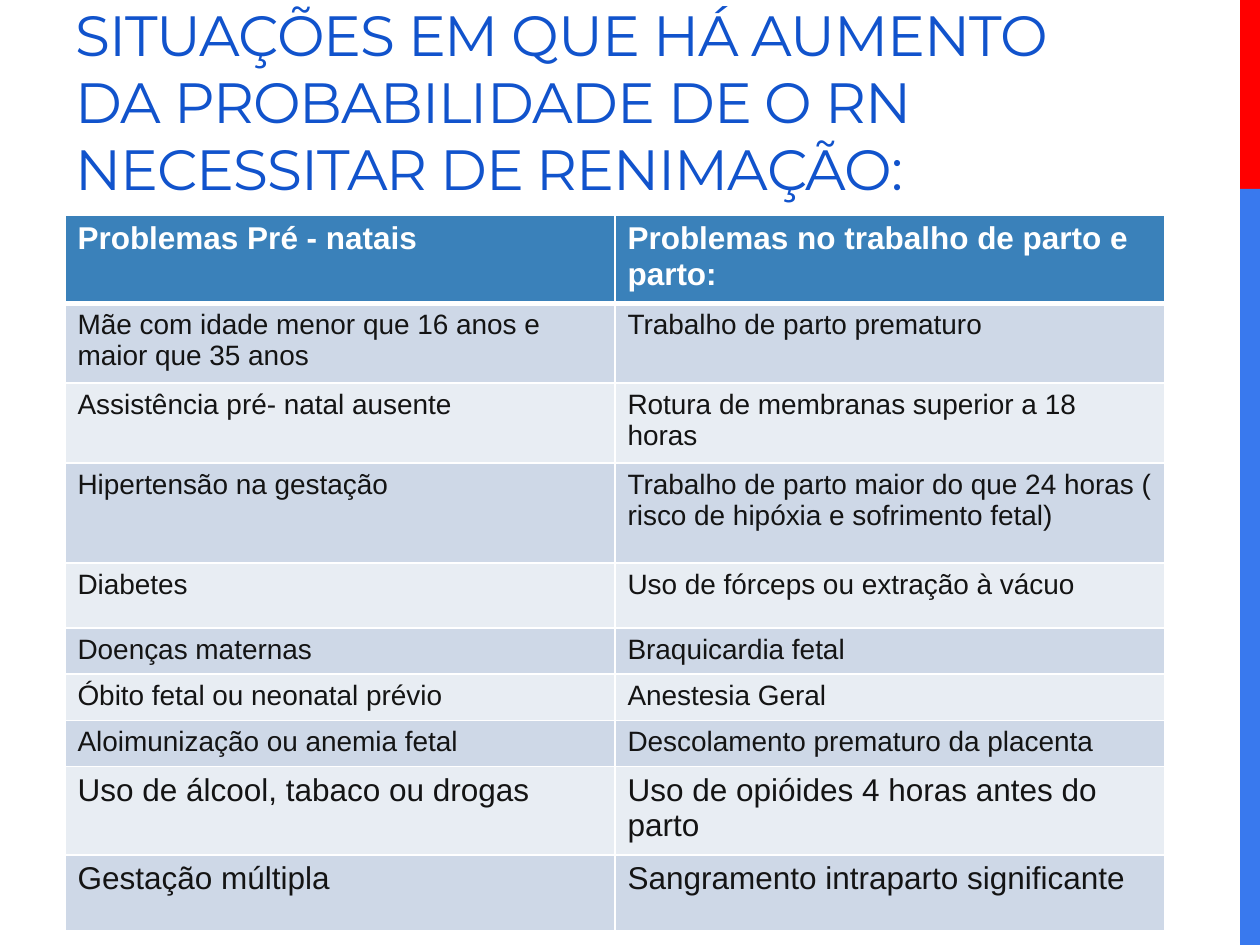
from dataclasses import dataclass
from typing import NamedTuple

from lxml.etree import SubElement as Sub
from pptx import Presentation
from pptx.dml.color import RGBColor as Rgb
from pptx.enum.shapes import MSO_SHAPE as Kind
from pptx.enum.text import MSO_ANCHOR as Anchor
from pptx.oxml.ns import qn
from pptx.util import Pt

SCALE = 914400 / 126


@dataclass(frozen=True)
class Theme:
    """Colours, fonts and type sizes of the slide."""
    red: str = "FF0000"
    blue: str = "3979EE"
    title: str = "1153CC"
    head: str = "3A81BA"
    dark: str = "CED8E7"
    light: str = "E8EDF3"
    ink: str = "141414"
    white: str = "FFFFFF"
    face: str = "Montserrat"
    body: str = "Arial"
    big: float = 32.4
    mid: int = 18
    small: int = 16


class Box(NamedTuple):
    """A place on the slide in px."""
    left: int
    top: int
    width: int
    height: int


class Bar(NamedTuple):
    """A coloured strip on the right edge."""
    box: Box
    fill: str


class Row(NamedTuple):
    """A table row: its height, its type size and both texts."""
    height: int
    size: int
    left: str
    right: str


LOOK = Theme()
BARS = [
    Bar(Box(1240, 0, 20, 189), LOOK.red),
    Bar(Box(1240, 189, 20, 756), LOOK.blue),
]
TITLE = "SITUAÇÕES EM QUE HÁ AUMENTO DA PROBABILIDADE DE O RN NECESSITAR DE RENIMAÇÃO:"
ROWS = [
    Row(83, LOOK.mid, "Problemas Pré - natais", "Problemas no trabalho de parto e parto:"),
    Row(75, LOOK.small, "Mãe com idade menor que 16 anos e maior que 35 anos", "Trabalho de parto prematuro"),
    Row(75, LOOK.small, "Assistência pré- natal ausente", "Rotura de membranas superior a 18 horas"),
    Row(100, LOOK.small, "Hipertensão na gestação",
        "Trabalho de parto maior do que 24 horas ( risco de hipóxia e sofrimento fetal)"),
    Row(65, LOOK.small, "Diabetes", "Uso de fórceps ou extração à vácuo"),
    Row(44, LOOK.small, "Doenças maternas", "Braquicardia fetal"),
    Row(44, LOOK.small, "Óbito fetal ou neonatal prévio", "Anestesia Geral"),
    Row(44, LOOK.small, "Aloimunização ou anemia fetal", "Descolamento prematuro da placenta"),
    Row(83, LOOK.mid, "Uso de álcool, tabaco ou drogas", "Uso de opióides 4 horas antes do parto"),
    Row(76, LOOK.mid, "Gestação múltipla", "Sangramento intraparto significante"),
]


def px(num: int) -> int:
    """Turn px into EMU."""
    return round(num * SCALE)


def place(box: Box) -> list[int]:
    """Turn a box into EMU."""
    return [px(num) for num in box]


def style(item: object, form: dict) -> None:
    """Set each format value on an item."""
    for name, value in form.items():
        setattr(item, name, value)


def paint(fill: object, tint: str) -> None:
    """Give a solid fill."""
    fill.solid()
    fill.fore_color.rgb = Rgb.from_string(tint)


def write(frame: object, text: str, tint: str, form: dict) -> object:
    """Write one run of text and return it."""
    run = frame.paragraphs[0].add_run()
    run.text = text
    style(run.font, form)
    run.font.color.rgb = Rgb.from_string(tint)
    return run


def draw_bar(slide: object, bar: Bar) -> None:
    """Draw a plain strip."""
    shape = slide.shapes.add_shape(Kind.RECTANGLE, *place(bar.box))
    shape.shadow.inherit = False
    paint(shape.fill, bar.fill)
    shape.line.fill.background()


def draw_title(slide: object, box: Box) -> None:
    """Write the heading."""
    frame = slide.shapes.add_textbox(*place(box)).text_frame
    style(frame, {"word_wrap": True, "vertical_anchor": Anchor.BOTTOM})
    frame.paragraphs[0].line_spacing = 0.98
    run = write(frame, TITLE, LOOK.title, {"name": LOOK.face, "size": Pt(LOOK.big)})
    run.font._element.set("spc", "-60")


def edge(cell: object, sides: dict[str, int]) -> None:
    """Add white borders with the given widths."""
    props = cell._tc.get_or_add_tcPr()
    for side, width in sides.items():
        line = Sub(props, qn(f"a:ln{side}"), w=str(Pt(width)))
        Sub(Sub(line, qn("a:solidFill")), qn("a:srgbClr"), val=LOOK.white)


def draw_table(slide: object, box: Box, rows: list[Row]) -> None:
    """Draw the table of risks."""
    table = slide.shapes.add_table(len(rows), 2, *place(box)).table
    for col in table.columns:
        col.width = px(box.width // 2)
    for i, row in enumerate(rows):
        table.rows[i].height = px(row.height)
        head = i == 0
        fill = LOOK.head if head else LOOK.dark if i % 2 else LOOK.light
        sides = {"L": 1, "R": 1, "T": 3 if i == 1 else 1, "B": 3 if head else 1}
        form = {"name": LOOK.body, "size": Pt(row.size), "bold": head}
        for j, text in enumerate((row.left, row.right)):
            cell = table.cell(i, j)
            edge(cell, sides)
            paint(cell.fill, fill)
            write(cell.text_frame, text, LOOK.white if head else LOOK.ink, form)


def main() -> None:
    """Build and save the slide."""
    deck = Presentation()
    style(deck, {"slide_width": px(1260), "slide_height": px(945)})
    slide = deck.slides.add_slide(deck.slide_layouts[6])
    for bar in BARS:
        draw_bar(slide, bar)
    draw_title(slide, Box(63, 21, 1092, 189))
    draw_table(slide, Box(65, 215, 1100, sum(row.height for row in ROWS)), ROWS)
    deck.save("out.pptx")


if __name__ == "__main__":
    main()
